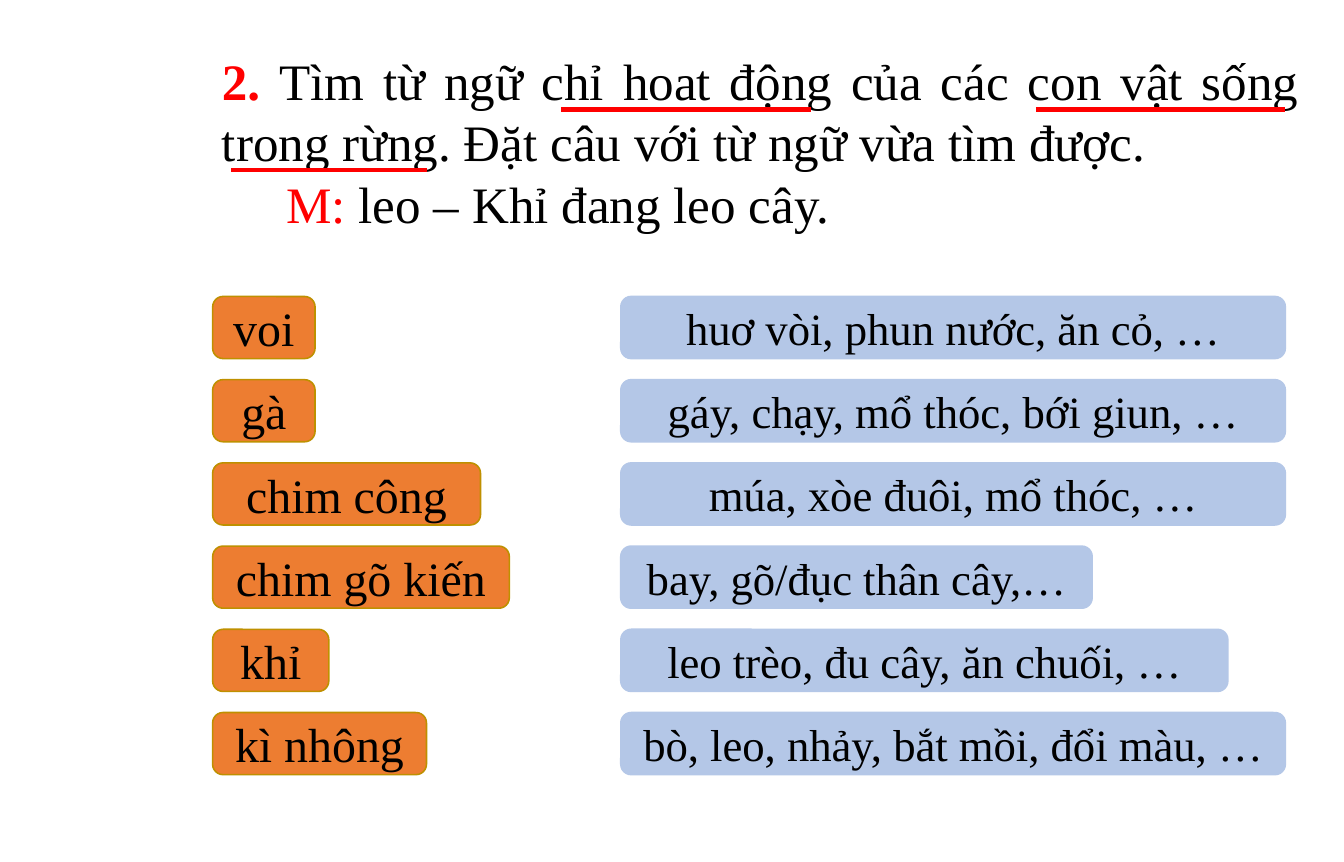
from pptx import Presentation
from pptx.dml.color import RGBColor
from pptx.enum.shapes import MSO_CONNECTOR, MSO_SHAPE
from pptx.enum.text import MSO_ANCHOR, MSO_AUTO_SIZE, PP_ALIGN
from pptx.oxml.ns import qn
from pptx.util import Inches, Pt
from lxml.etree import SubElement

RED = RGBColor(0xFF, 0x00, 0x00)
BLACK = RGBColor(0x00, 0x00, 0x00)
ORANGE = RGBColor(0xED, 0x7D, 0x31)
GOLD = RGBColor(0xBF, 0x90, 0x00)
BLUE = RGBColor(0xB4, 0xC7, 0xE7)

FONT = "Times New Roman"
ANIMAL_LEFT, ACTION_LEFT = 1.85, 5.4
FIRST_TOP, LAST_TOP, BOX_HEIGHT = 2.58, 6.2, 0.54

# Animal, width of its box, its actions, width of their box
ROWS = [
    ("voi", 0.89, "huơ vòi, phun nước, ăn cỏ, …", 5.78),
    ("gà", 0.89, "gáy, chạy, mổ thóc, bới giun, …", 5.78),
    ("chim công", 2.33, "múa, xòe đuôi, mổ thóc, …", 5.78),
    ("chim gõ kiến", 2.58, "bay, gõ/đục thân cây,…", 4.1),
    ("khỉ", 1.01, "leo trèo, đu cây, ăn chuối, …", 5.28),
    ("kì nhông", 1.86, "bò, leo, nhảy, bắt mồi, đổi màu, …", 5.78),
]

# Start x, end x and y of each underline
UNDERLINES = [(4.88, 7.05, 0.95), (9.01, 11.18, 0.95), (2.01, 3.71, 1.48)]


def set_attributes(target, values):
    for name, value in values.items():
        setattr(target, name, value)


def format_frame(tf, anchor):
    set_attributes(tf, {
        "word_wrap": True, "vertical_anchor": anchor,
        "margin_left": Inches(0.12), "margin_right": Inches(0.12),
        "margin_top": Inches(0.06), "margin_bottom": Inches(0.06),
    })


def add_run(p, text, size, color=BLACK, bold=False):
    r = p.add_run()
    r.text = text
    set_attributes(r.font, {"name": FONT, "size": Pt(size), "bold": bold})
    r.font.color.rgb = color


def fill_title(sp):
    set_attributes(sp, {"left": Inches(1.81), "top": Inches(0.37),
                        "width": Inches(9.62), "height": Inches(1.74)})
    tf = sp.text_frame
    format_frame(tf, MSO_ANCHOR.TOP)
    tf.auto_size = MSO_AUTO_SIZE.SHAPE_TO_FIT_TEXT
    question, example = tf.paragraphs[0], tf.add_paragraph()
    for p in (question, example):
        set_attributes(p, {"alignment": PP_ALIGN.JUSTIFY, "line_spacing": 1.0,
                           "space_before": Pt(0)})
    add_run(question, "2. ", 32, RED, True)
    add_run(question, "Tìm từ ngữ chỉ hoat động của các con vật sống trong rừng. "
                      "Đặt câu với từ ngữ vừa tìm được.", 32)
    example._p.get_or_add_pPr().set("indent", str(Inches(0.56)))
    add_run(example, "M: ", 32, RED)
    add_run(example, "leo – Khỉ đang leo cây.", 32)


def add_box(s, left, top, width, text, size, fill, line):
    sp = s.shapes.add_shape(MSO_SHAPE.ROUNDED_RECTANGLE, Inches(left), Inches(top),
                            Inches(width), Inches(BOX_HEIGHT))
    sp.shadow.inherit = False
    sp.fill.solid()
    sp.fill.fore_color.rgb = fill
    sp.line.color.rgb = line
    sp.line.width = Pt(1)
    tf = sp.text_frame
    format_frame(tf, MSO_ANCHOR.MIDDLE)
    p = tf.paragraphs[0]
    p.alignment = PP_ALIGN.CENTER
    add_run(p, text, size)


def add_underline(s, start, end, y):
    line = s.shapes.add_connector(MSO_CONNECTOR.STRAIGHT, Inches(start), Inches(y),
                                  Inches(end), Inches(y))
    line.line.color.rgb = RED
    line.line.width = Pt(3)
    SubElement(line._element.spPr, qn("a:effectLst"))


def main():
    prs = Presentation()
    set_attributes(prs, {"slide_width": Inches(11.69), "slide_height": Inches(7.5)})
    s = prs.slides.add_slide(prs.slide_layouts.get_by_name("Title Only"))

    # Question and example
    fill_title(s.shapes.title)

    # Animals and their actions
    pitch = (LAST_TOP - FIRST_TOP) / (len(ROWS) - 1)
    for i, (animal, animal_width, actions, actions_width) in enumerate(ROWS):
        top = FIRST_TOP + i * pitch
        add_box(s, ANIMAL_LEFT, top, animal_width, animal, 30, ORANGE, GOLD)
        add_box(s, ACTION_LEFT, top, actions_width, actions, 28, BLUE, BLUE)

    # Key words underlined in the question
    for start, end, y in UNDERLINES:
        add_underline(s, start, end, y)

    prs.save("out.pptx")


if __name__ == "__main__":
    main()
